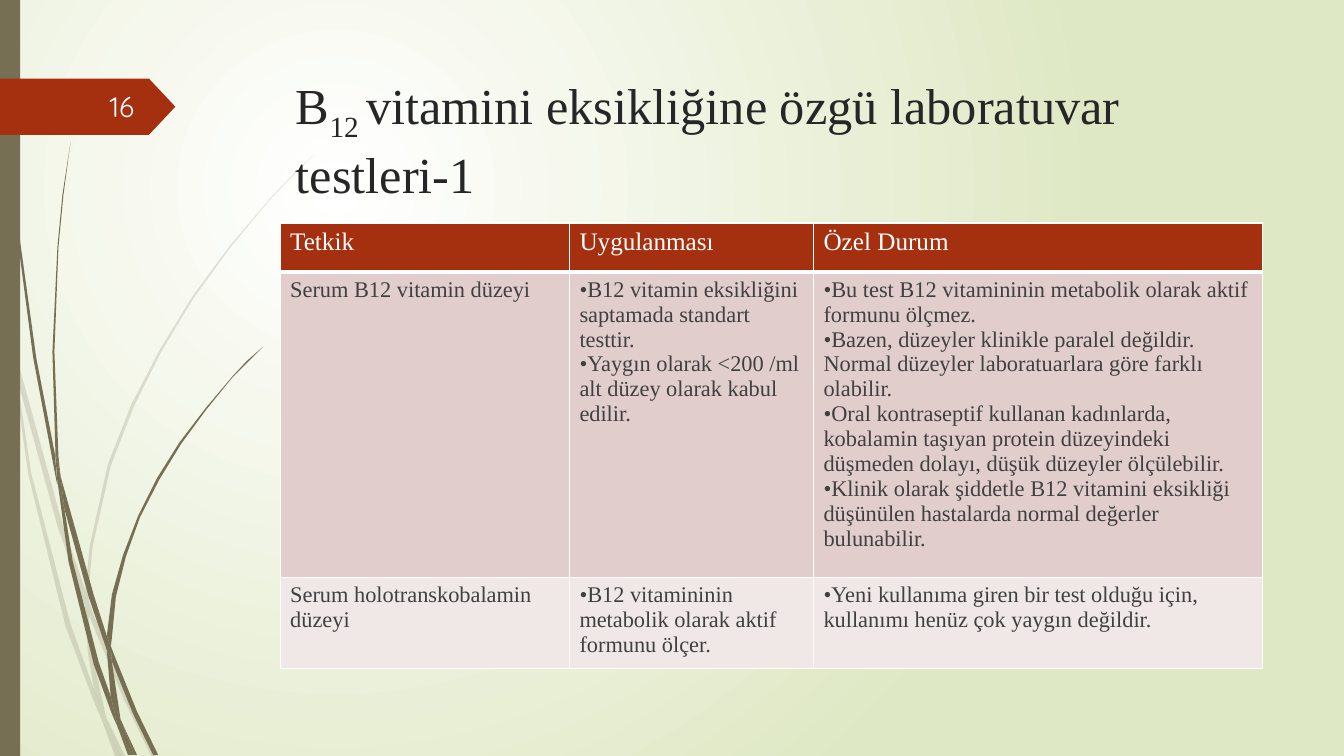
from lxml.etree import SubElement as Sub
from pptx import Presentation
from pptx.dml.color import RGBColor as RGB
from pptx.enum.shapes import MSO_SHAPE as Shape
from pptx.enum.text import MSO_ANCHOR as Anchor, PP_ALIGN as Align
from pptx.oxml.ns import qn
from pptx.util import Cm, Pt

SERIF, SANS = "Times New Roman", "Quicksand"
HUES = {"white": "FFFFFF", "sage": "DFE8C4", "olive": "766F54",
        "rust": "A53010", "ink": "262626", "gray": "404040",
        "rose": "E1CDCC", "blush": "F0E8E7", "page": "FEFFFF"}

TITLE = [("B", 0), ("12 ", -25),
         ("vitamini eksikliğine özgü laboratuvar testleri-1", 0)]
PAGE = "16"
HEAD = ["Tetkik", "Uygulanması", "Özel Durum"]
# The first cell of a row is plain text, lists are bulleted
ROWS = [
    ["Serum B12 vitamin düzeyi",
     ["B12 vitamin eksikliğini saptamada standart testtir.",
      "Yaygın olarak <200 /ml alt düzey olarak kabul edilir."],
     ["Bu test B12 vitamininin metabolik olarak aktif formunu ölçmez.",
      "Bazen, düzeyler klinikle paralel değildir. Normal düzeyler "
      "laboratuarlara göre farklı olabilir.",
      "Oral kontraseptif kullanan kadınlarda, kobalamin taşıyan protein "
      "düzeyindeki düşmeden dolayı, düşük düzeyler ölçülebilir.",
      "Klinik olarak şiddetle B12 vitamini eksikliği düşünülen hastalarda "
      "normal değerler bulunabilir."]],
    ["Serum holotranskobalamin düzeyi",
     ["B12 vitamininin metabolik olarak aktif formunu ölçer."],
     ["Yeni kullanıma giren bir test olduğu için, kullanımı henüz çok "
      "yaygın değildir."]],
]
WIDTHS = [7.29, 6.15, 11.32]
HEIGHTS = [1.24, 7.15, 2.1]
FILLS = ["rust", "rose", "blush"]

# Outlines of the grass blades, in steps of STEP cm
STEP = .0254
PALE = [
    [(11, 350), (8, 322), (0, 282), (0, 299), (10, 344)],
    [(57, 522), (84, 599), (85, 586), (62, 520), (14, 345), (17, 376)],
    [(92, 607), (88, 596), (88, 610), (123, 694), (150, 751), (155, 751),
     (127, 692)],
    [(119, 751), (124, 751), (105, 711)],
    [(93, 683), (70, 619), (31, 469), (17, 376), (11, 350), (28, 470),
     (65, 621), (92, 693), (101, 714), (99, 707)],
    [(84, 599), (87, 646), (93, 683), (96, 692), (105, 711), (104, 706),
     (91, 646), (88, 610), (88, 608)],
    [(88, 584), (92, 542), (110, 462), (133, 403), (160, 349), (192, 296),
     (229, 245), (268, 198), (290, 175), (312, 153), (289, 175), (268, 197),
     (228, 244), (191, 294), (158, 348), (130, 402), (107, 461), (89, 542),
     (85, 584), (85, 586), (88, 596)],
    [(101, 714), (114, 751), (119, 751)],
    [(88, 608), (88, 610), (88, 596), (85, 586), (84, 599)],
    [(96, 692), (93, 683), (99, 707), (101, 714), (119, 751), (105, 711)],
]
DARK = [
    [(7, 110), (17, 233), (33, 355), (56, 477), (57, 481), (55, 457),
     (55, 453), (36, 355), (19, 232), (8, 109), (5, 48), (3, 0), (3, 48)],
    [(88, 592), (106, 645), (106, 631), (93, 590), (60, 472), (64, 505)],
    [(113, 649), (110, 641), (111, 656), (132, 708), (152, 749), (157, 749),
     (136, 706)],
    [(110, 691), (98, 657), (72, 556), (64, 505), (57, 477), (68, 557),
     (93, 659), (111, 708), (117, 722), (116, 717)],
    [(60, 472), (58, 453), (54, 349), (58, 245), (63, 193), (70, 141),
     (62, 193), (57, 245), (52, 349), (55, 449)],
    [(133, 749), (136, 749), (122, 719)],
    [(57, 478), (64, 505), (60, 472), (55, 449), (55, 453)],
    [(111, 633), (115, 592), (125, 552), (139, 513), (158, 476), (180, 440),
     (205, 406), (231, 374), (246, 359), (261, 344), (245, 358), (231, 373),
     (204, 405), (178, 439), (156, 474), (137, 512), (122, 551), (111, 590),
     (106, 631), (110, 641)],
    [(117, 722), (127, 749), (131, 749)],
    [(106, 645), (110, 692), (116, 706), (122, 719), (120, 716), (111, 656),
     (109, 651)],
    [(106, 645), (109, 651), (111, 656), (110, 641), (106, 631)],
    [(116, 706), (110, 691), (116, 717), (117, 722), (131, 749), (133, 749),
     (122, 719)],
]


def tint(fill, hue):
    fill.solid()
    fill.fore_color.rgb = RGB.from_string(HUES[hue])


def style(run, size, hue, face=SERIF):
    font = run.font
    font.size, font.name, font.bold = Pt(size), face, False
    font.color.rgb = RGB.from_string(HUES[hue])


def finish(shape, hue):
    tint(shape.fill, hue)
    shape.line.fill.background()
    shape.shadow.inherit = False


def blade(dots, alpha):
    """Fill one outline; alpha is its opacity in percent."""
    ring = [(Cm(x * STEP), Cm(min(y, 750) * STEP)) for x, y in dots]
    form = slide.shapes.build_freeform(*ring[0])
    form.add_line_segments(ring[1:], close=True)
    leaf = form.convert_to_shape()
    finish(leaf, "olive")
    if alpha < 100:
        clr = leaf.element.spPr.find(qn("a:solidFill"))[0]
        Sub(clr, qn("a:alpha"), val=str(alpha * 1000))


def edge(cell, row):
    """White cell borders, thick below the header."""
    props = cell._tc.get_or_add_tcPr()
    for side in "LRTB":
        thick = (row, side) in ((0, "B"), (1, "T"))
        line = Sub(props, qn("a:ln" + side), w=str(Pt(3 if thick else 1)))
        Sub(Sub(line, qn("a:solidFill")), qn("a:srgbClr"), val=HUES["white"])


def write(cell, text, size, hue):
    listed = isinstance(text, list)
    cell.text_frame.text = "\n".join(text) if listed else text
    for para in cell.text_frame.paragraphs:
        style(para.runs[0], size, hue)
        if listed:
            props = para._p.get_or_add_pPr()
            props.set("marL", "0")
            props.set("indent", "0")
            Sub(props, qn("a:buFont"), typeface=SERIF)
            Sub(props, qn("a:buChar"), char="•")
        last = Sub(para._p, qn("a:endParaRPr"), sz=str(size * 100))
        Sub(last, qn("a:latin"), typeface=SERIF)


def label(x, y, w, h, anchor):
    frame = slide.shapes.add_textbox(Cm(x), Cm(y), Cm(w), Cm(h)).text_frame
    frame.word_wrap = True
    frame.vertical_anchor = anchor
    return frame.paragraphs[0]


deck = Presentation()
deck.slide_width, deck.slide_height = Cm(33.87), Cm(19.05)
slide = deck.slides.add_slide(deck.slide_layouts[6])

back = slide.background.fill
back.gradient()
for stop, hue in zip(back.gradient_stops, ("white", "sage")):
    stop.color.rgb = RGB.from_string(HUES[hue])
lin = next(slide.element.iter(qn("a:lin")))
grad = lin.getparent()
grad.remove(lin)
Sub(Sub(grad, qn("a:path"), {"path": "circle"}), qn("a:fillToRect"),
    l="50000", t="50000", r="100000", b="100000")

for group, alpha in ((PALE, 20), (DARK, 100)):
    for dots in group:
        blade(dots, alpha)

bar = slide.shapes.add_shape(Shape.RECTANGLE, 0, 0, Cm(.51), Cm(19.05))
finish(bar, "olive")
flag = slide.shapes.add_shape(Shape.PENTAGON, 0, Cm(1.98), Cm(4.42), Cm(1.42))
flag.adjustments[0] = .47
finish(flag, "rust")

para = label(7.21, 1.69, 24.77, 3.56, Anchor.BOTTOM)
for text, base in TITLE:
    run = para.add_run()
    run.text = text
    style(run, 36, "ink")
    if base:
        run._r.get_or_add_rPr().set("baseline", str(base * 1000))

para = label(1.47, 2.18, 2.16, 1.02, Anchor.MIDDLE)
para.text = PAGE
para.alignment = Align.RIGHT
style(para.runs[0], 20, "page", SANS)

grid = slide.shapes.add_table(3, 3, Cm(7.06), Cm(5.62), Cm(sum(WIDTHS)),
                              Cm(sum(HEIGHTS))).table
for col, width in zip(grid.columns, WIDTHS):
    col.width = Cm(width)
for r, texts in enumerate([HEAD, *ROWS]):
    grid.rows[r].height = Cm(HEIGHTS[r])
    for c, text in enumerate(texts):
        cell = grid.cell(r, c)
        edge(cell, r)
        tint(cell.fill, FILLS[r])
        write(cell, text, *((16, "gray") if r else (18, "white")))

deck.save("out.pptx")
